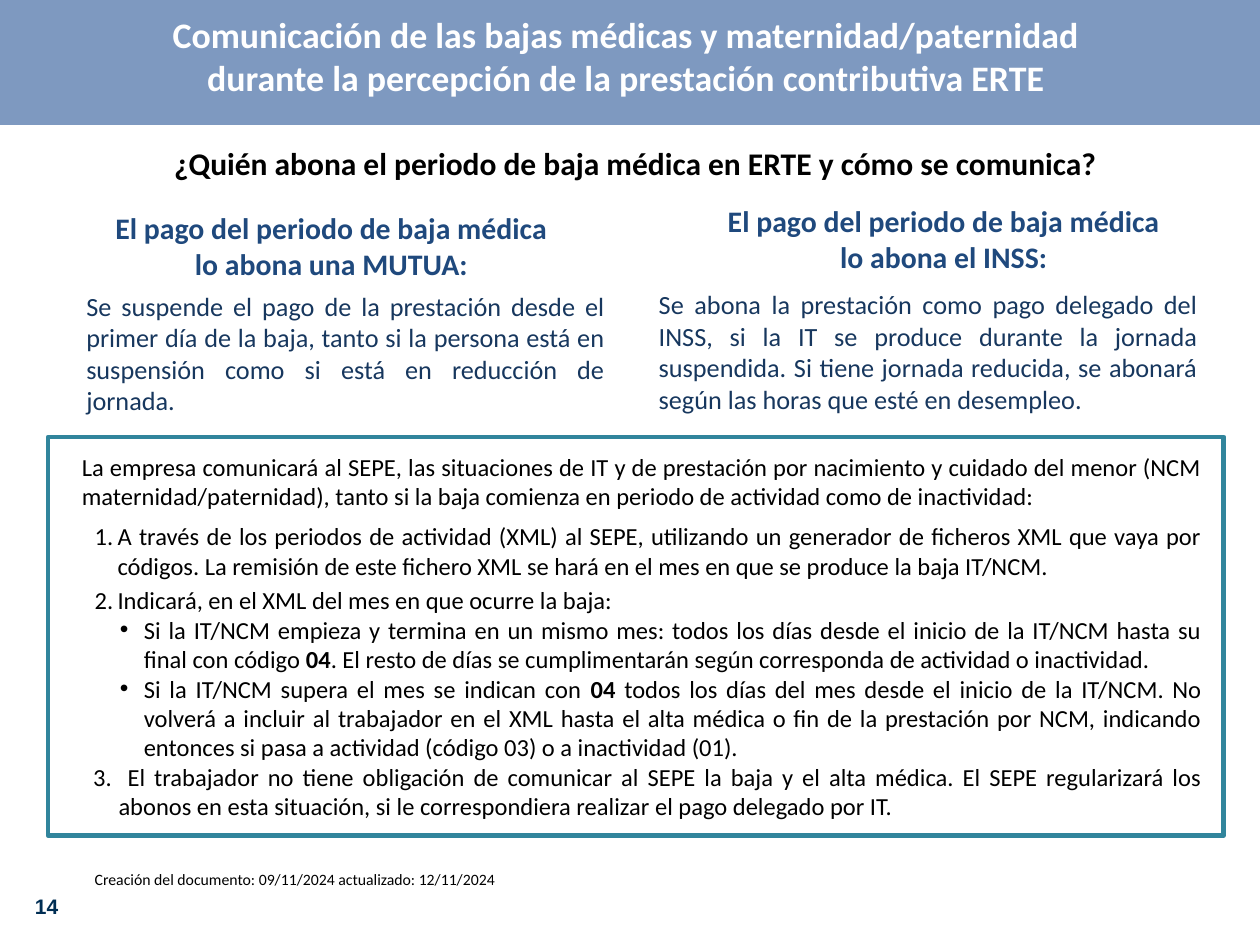
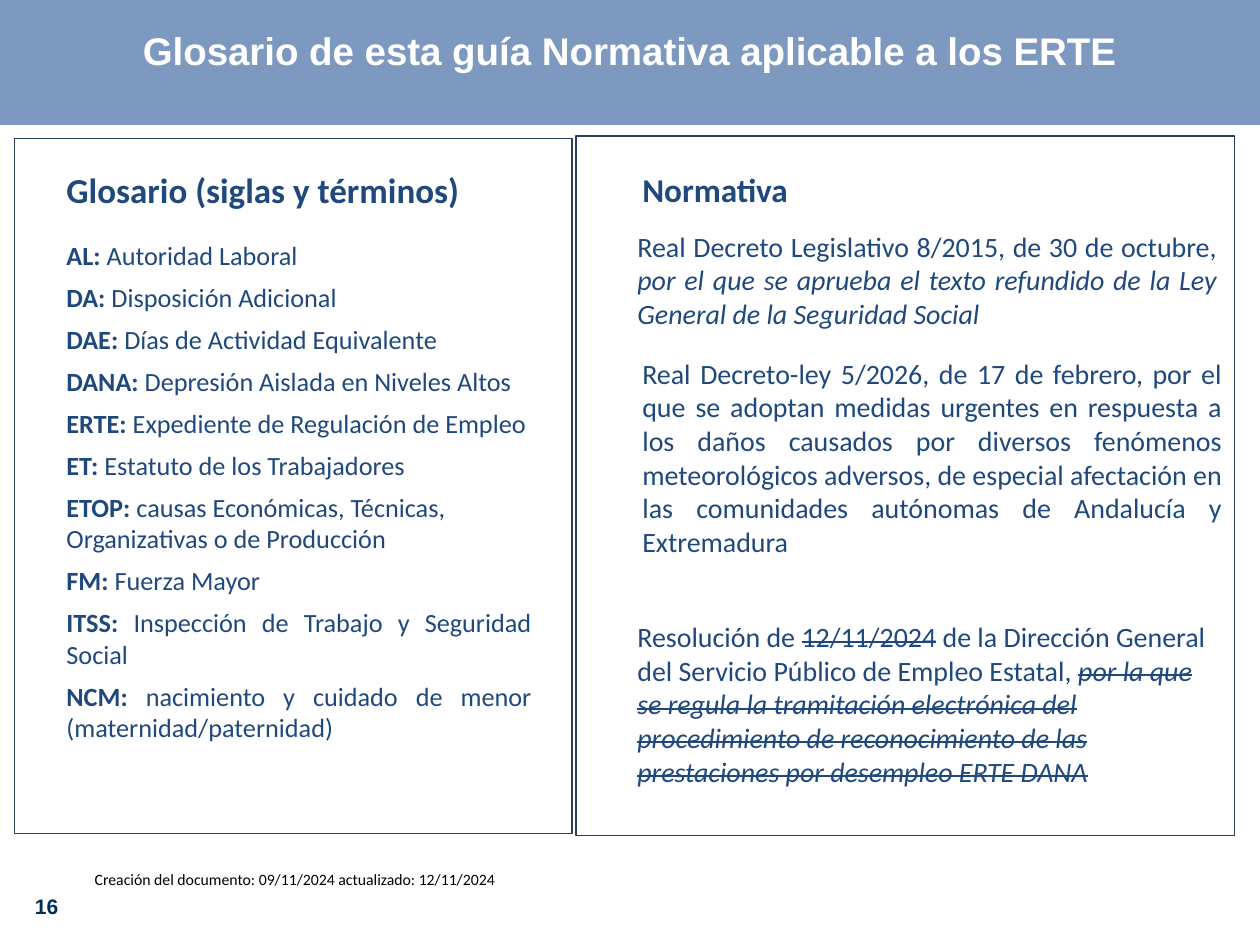
from lxml.etree import SubElement
from pptx import Presentation
from pptx.dml.color import RGBColor
from pptx.enum.shapes import MSO_SHAPE as SHAPE
from pptx.enum.text import MSO_ANCHOR as ANCHOR, PP_ALIGN as ALIGN
from pptx.oxml.ns import qn
from pptx.util import Cm, Pt

COLORS = {
    "band": "7E99C0", "white": "FFFFFF", "black": "000000", "number": "002E54",
    "blue": "1F497D", "navy": "17375E", "frame": "254061", "teal": "31859C",
}
FOOTER = "Creación del documento: 09/11/2024 actualizado: 12/11/2024"
INDENT = 0.25
LEFT, CENTER, JUSTIFY = ALIGN.LEFT, ALIGN.CENTER, ALIGN.JUSTIFY


def para(*runs, **fmt):
    """A paragraph: runs are strings or (text, flags), flags among b, i and s."""
    return [r if isinstance(r, tuple) else (r, "") for r in runs], fmt


class Deck:
    def __init__(self):
        self.prs = Presentation()
        self.prs.slide_width, self.prs.slide_height = Cm(25.4), Cm(19.05)
        self.s = None

    def color(self, name):
        return RGBColor.from_string(COLORS[name])

    # Band, page number and footer, shared by every slide
    def slide(self, number):
        self.s = self.prs.slides.add_slide(self.prs.slide_layouts[6])
        self.box(0, 0, 25.4, 2.52, fill="band")
        sp = self.box(0.18, 17.75, 1.52, 1.02, fill="white")
        sp.text_frame.vertical_anchor = ANCHOR.MIDDLE
        self.fill_text(sp.text_frame, [para((str(number), "b"))], 12, "number",
                       CENTER, font="Arial")
        self.text(1.66, 17.4, 10.36, 0.64, [para(FOOTER)], 9, "black")

    def box(self, x, y, w, h, fill=None, line=None, width=0.75):
        sp = self.s.shapes.add_shape(SHAPE.RECTANGLE, Cm(x), Cm(y), Cm(w), Cm(h))
        sp.shadow.inherit = False
        if fill:
            sp.fill.solid()
            sp.fill.fore_color.rgb = self.color(fill)
        else:
            sp.fill.background()
        if line:
            sp.line.color.rgb = self.color(line)
            sp.line.width = Pt(width)
        else:
            sp.line.fill.background()
        return sp

    def text(self, x, y, w, h, paras, size, color, align=LEFT, **style):
        sp = self.s.shapes.add_textbox(Cm(x), Cm(y), Cm(w), Cm(h))
        self.fill_text(sp.text_frame, paras, size, color, align, **style)

    def fill_text(self, tf, paras, size, color, align=LEFT, font="Calibri", left=0):
        tf.word_wrap = True
        for i, (runs, fmt) in enumerate(paras):
            p = tf.paragraphs[0] if i == 0 else tf.add_paragraph()
            p.alignment = fmt.get("align", align)
            if "before" in fmt:
                p.space_before = Pt(fmt["before"])
            self.indent(p, fmt.get("left", left), fmt.get("hang", 0))
            if "bullet" in fmt:
                self.bullet(p, fmt["bullet"])
            for text, flags in runs:
                r = p.add_run()
                r.text = text
                r.font.name = font
                r.font.size = Pt(fmt.get("size", size))
                r.font.color.rgb = self.color(color)
                r.font.bold = "b" in flags
                r.font.italic = "i" in flags
                if "s" in flags:
                    r._r.get_or_add_rPr().set("strike", "sngStrike")

    def indent(self, p, left, hang):
        pPr = p._p.get_or_add_pPr()
        pPr.set("marL", str(Cm(left)))
        pPr.set("indent", str(-Cm(hang)))

    def bullet(self, p, mark):
        """A number starts the automatic numbering there; a string is a bullet."""
        pPr = p._p.get_or_add_pPr()
        if isinstance(mark, int):
            bu = SubElement(pPr, qn("a:buAutoNum"), type="arabicPeriod")
            if mark > 1:
                bu.set("startAt", str(mark))
        else:
            SubElement(pPr, qn("a:buFont"), typeface="Arial")
            SubElement(pPr, qn("a:buChar"), char=mark)


def sick_leave_slide(d):
    d.slide(14)
    d.text(0.18, 0.13, 24.89, 2.03, [
        para(("Comunicación de las bajas médicas y maternidad/paternidad", "b")),
        para(("durante la percepción de la prestación contributiva ERTE", "b")),
    ], 20.5, "white", CENTER)
    d.text(0.71, 2.77, 24.21, 1.04, [
        para(("¿Quién abona el periodo de baja médica en ERTE y cómo se comunica?", "b")),
    ], 18, "black", CENTER)

    # Who pays: heading place, payer, body place, explanation
    payers = [
        ((0.41, 4.11, 12.29, 1.7), "lo abona una MUTUA:", (1.24, 5.72, 11.2, 2.82),
         "Se suspende el pago de la prestación desde el primer día de la baja, tanto si "
         "la persona está en suspensión como si está en reducción de jornada."),
        ((12.78, 3.96, 12.24, 1.7), "lo abona el INSS:", (12.78, 5.69, 11.61, 2.82),
         "Se abona la prestación como pago delegado del INSS, si la IT se produce durante "
         "la jornada suspendida. Si tiene jornada reducida, se abonará según las horas "
         "que esté en desempleo."),
    ]
    for head_at, payer, body_at, body in payers:
        d.text(*head_at, [para(("El pago del periodo de baja médica", "b")),
                          para((payer, "b"))], 17, "blue", CENTER, left=INDENT)
        d.text(*body_at, [para(body)], 15, "navy", JUSTIFY, left=INDENT)

    # Steps for the company
    step = dict(left=0.97, hang=0.46)
    case = dict(left=1.5, hang=0.48, bullet="•")
    sp = d.box(0.97, 8.81, 23.7, 8.03, line="teal", width=2.75)
    tf = sp.text_frame
    tf.vertical_anchor = ANCHOR.TOP
    tf.margin_left = tf.margin_right = Cm(0.43)
    tf.margin_top, tf.margin_bottom = Cm(0.3), Cm(0.23)
    d.fill_text(tf, [
        para("La empresa comunicará al SEPE, las situaciones de IT y de prestación por "
             "nacimiento y cuidado del menor (NCM maternidad/paternidad), tanto si la baja "
             "comienza en periodo de actividad como de inactividad:", left=INDENT),
        para("A través de los periodos de actividad (XML) al SEPE, utilizando un generador "
             "de ficheros XML que vaya por códigos. La remisión de este fichero XML se hará "
             "en el mes en que se produce la baja IT/NCM.", bullet=1, before=6, **step),
        para("Indicará, en el XML del mes en que ocurre la baja:",
             bullet=1, before=3, **step),
        para("Si la IT/NCM empieza y termina en un mismo mes: todos los días desde el "
             "inicio de la IT/NCM hasta su final con código ", ("04", "b"),
             ". El resto de días se cumplimentarán según corresponda de actividad o "
             "inactividad.", **case),
        para("Si la IT/NCM supera el mes se indican con ", ("04 ", "b"),
             "todos los días del mes desde el inicio de la IT/NCM. No volverá a incluir al "
             "trabajador en el XML hasta el alta médica o fin de la prestación por NCM, "
             "indicando entonces si pasa a actividad (código 03) o a inactividad (01).",
             **case),
        para(" El trabajador no tiene obligación de comunicar al SEPE la baja y el alta "
             "médica. El SEPE regularizará los abonos en esta situación, si le "
             "correspondiera realizar el pago delegado por IT.",
             bullet=3, left=0.99, hang=0.51),
    ], 14, "black", JUSTIFY)


def glossary_slide(d):
    d.slide(16)
    d.text(0.58, 0.43, 24.23, 1.19, [
        para(("Glosario de esta guía Normativa aplicable a los ERTE", "b")),
    ], 22, "white", CENTER, font="Arial")
    d.box(11.61, 2.74, 13.28, 14.1, line="frame")
    d.box(0.3, 2.79, 11.23, 14.02, line="frame")

    # Glossary
    terms = [
        ("AL", "Autoridad Laboral"),
        ("DA", "Disposición Adicional"),
        ("DAE", "Días de Actividad Equivalente"),
        ("DANA", "Depresión Aislada en Niveles Altos"),
        ("ERTE", "Expediente de Regulación de Empleo"),
        ("ET", "Estatuto de los Trabajadores"),
        ("ETOP", "causas Económicas, Técnicas, Organizativas o de Producción"),
        ("FM", "Fuerza Mayor"),
        ("ITSS", "Inspección de Trabajo y Seguridad Social"),
        ("NCM", "nacimiento y cuidado de menor (maternidad/paternidad)"),
    ]
    entries = [para((f"{term}: ", "b"), meaning, before=16 if i == 0 else 6,
                    align=LEFT if term == "ETOP" else JUSTIFY)
               for i, (term, meaning) in enumerate(terms)]
    d.text(0.84, 3.28, 10.13, 13.44,
           [para(("Glosario (siglas y términos)", "b"), size=20)] + entries,
           15, "blue", JUSTIFY, left=INDENT)

    # Regulations
    d.text(12.7, 3.28, 9.4, 1.88, [para(("Normativa", "b"))], 19, "blue")
    rules = [
        (12.6, 4.5, 2.31, JUSTIFY, para(
            "Real Decreto Legislativo 8/2015, de 30 de octubre, ",
            ("por el que se aprueba el texto refundido de la Ley General de la "
             "Seguridad Social", "i"))),
        (12.7, 7.06, 4.37, JUSTIFY, para(
            "Real Decreto-ley 5/2026, de 17 de febrero, por el que se adoptan medidas "
            "urgentes en respuesta a los daños causados por diversos fenómenos "
            "meteorológicos adversos, de especial afectación en las comunidades autónomas "
            "de Andalucía y Extremadura")),
        (12.6, 12.37, 3.68, LEFT, para(
            "Resolución de ", ("12/11/2024", "s"),
            " de la Dirección General del Servicio Público de Empleo Estatal, ",
            ("por la que se regula la tramitación electrónica del procedimiento de "
             "reconocimiento de las prestaciones por desempleo ERTE DANA", "is"))),
    ]
    for x, y, h, align, rule in rules:
        d.text(x, y, 12.19, h, [rule], 16, "blue", align)


def main():
    d = Deck()
    sick_leave_slide(d)
    glossary_slide(d)
    d.prs.save("out.pptx")


if __name__ == "__main__":
    main()
